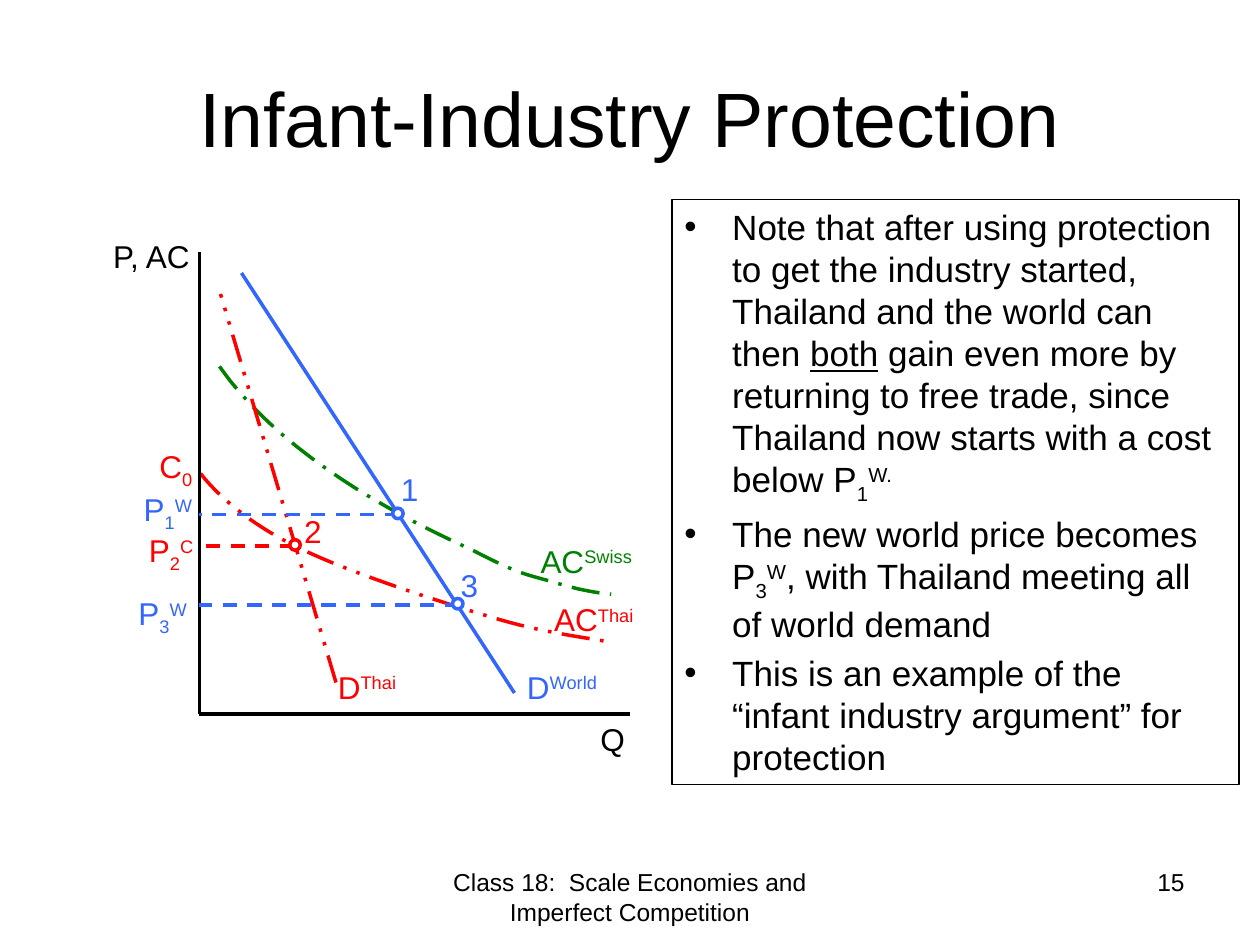
"""Build the infant-industry protection slide on a grid of 120 columns by 90 rows."""
import pptx
import pptx.util
import pptx.dml.color
import pptx.enum.dml
import pptx.enum.shapes
import pptx.enum.text
import lxml.etree

BLACK, RED, BLUE, GREEN = "000000", "FF0000", "3366FF", "008000"
SUB, SUP = -25000, 30000
LEFT, CENTER, RIGHT = (pptx.enum.text.PP_ALIGN.LEFT, pptx.enum.text.PP_ALIGN.CENTER,
                       pptx.enum.text.PP_ALIGN.RIGHT)
DASH = pptx.enum.dml.MSO_LINE.DASH
DASH_DOT = pptx.enum.dml.MSO_LINE.LONG_DASH_DOT
DASH_DOT_DOT = pptx.enum.dml.MSO_LINE.DASH_DOT_DOT
A = "{http://schemas.openxmlformats.org/drawingml/2006/main}"

prs = pptx.Presentation()
prs.slide_width, prs.slide_height = pptx.util.Inches(10), pptx.util.Inches(7.5)
s = prs.slides.add_slide(prs.slide_layouts[6])
cell = prs.slide_width // 120


def stroke(sp, colour, dash=None, width=2):
    sp.line.color.rgb = pptx.dml.color.RGBColor.from_string(colour)
    sp.line.width = pptx.util.Pt(width)
    if dash is not None:
        sp.line.dash_style = dash


def text(box, paras, size, colour=BLACK, align=LEFT):
    sp = s.shapes.add_textbox(*[round(v * cell) for v in box])
    tf = sp.text_frame
    tf.word_wrap = True
    for i, runs in enumerate(paras):
        p = tf.add_paragraph() if i else tf.paragraphs[0]
        p.alignment = align
        for words, base in runs:
            r = p.add_run()
            r.text = words
            r.font.name, r.font.size = "Arial", pptx.util.Pt(size)
            r.font.color.rgb = pptx.dml.color.RGBColor.from_string(colour)
            if base:
                r.font._element.set("baseline", str(base))
    return sp


title = text((6, 3.6, 108, 15), [[("Infant-Industry Protection", 0)]], 44, align=CENTER)
title.text_frame.vertical_anchor = pptx.enum.text.MSO_ANCHOR.MIDDLE

body = text((64, 19, 54, 55.7), [
    [("Note that after using protection to get the industry started, "
      "Thailand and the world can then ", 0), ("both", 0),
     (" gain even more by returning to free trade, since Thailand now "
      "starts with a cost below P", 0), ("1", SUB), ("W.", SUP)],
    [("The new world price becomes P", 0), ("3", SUB), ("W", SUP),
     (", with Thailand meeting all of world demand", 0)],
    [("This is an example of the “infant industry argument” for protection", 0)],
], 20)
stroke(body, BLACK, width=0.75)
body.text_frame.paragraphs[0].runs[1].font.underline = True
for p in body.text_frame.paragraphs:
    p.space_before = pptx.util.Pt(4)
    pPr = p._p.get_or_add_pPr()
    pPr.set("marL", str(pptx.util.Inches(0.38)))
    pPr.set("indent", str(-pptx.util.Inches(0.38)))
    lxml.etree.SubElement(pPr, A + "buFont").set("typeface", "Arial")
    lxml.etree.SubElement(pPr, A + "buChar").set("char", "•")

curves = [
    (GREEN, DASH_DOT, [(20.9, 34.9), (27.6, 44.5), (40.9, 50.5), (45, 52.4), (49.1, 54.5),
                       (49.6, 54.6), (52.6, 55.4), (55.6, 56.4), (58.2, 56.6), (58.2, 56.6)]),
    (RED, DASH_DOT_DOT, [(19.1, 45.1), (20.4, 46.8), (23.4, 49.7), (28.1, 52), (32.8, 54.4),
                         (42.1, 57.4), (47.2, 58.9), (52.2, 60.4), (56.5, 60.8), (58.3, 61.2)]),
]
steps = 20
for colour, dash, pts in curves:
    fb = s.shapes.build_freeform(*[v * cell for v in pts[0]])
    for k in range(0, len(pts) - 1, 3):
        bezier = []
        for t in [n / steps for n in range(1, steps + 1)]:
            weights = ((1 - t) ** 3, 3 * t * (1 - t) ** 2, 3 * t ** 2 * (1 - t), t ** 3)
            bezier.append([cell * sum(w * pt[axis] for w, pt in zip(weights, pts[k:k + 4]))
                           for axis in (0, 1)])
        fb.add_line_segments(bezier, close=False)
    sp = fb.convert_to_shape()
    sp.shadow.inherit = False
    sp.fill.background()
    stroke(sp, colour, dash)

axis_x, axis_y = 19, 68
for x1, y1, x2, y2, colour, dash in [
    (axis_x, axis_y, 60, axis_y, BLACK, None),
    (axis_x, axis_y, axis_x, 24, BLACK, None),
    (32, 65, 21, 28, RED, DASH_DOT_DOT),
    (28, 52, axis_x, 52, RED, DASH),
    (49, 66, 23, 26, BLUE, None),
    (38, 49, axis_x, 49, BLUE, DASH),
    (43.7, 57.6, axis_x, 57.6, BLUE, DASH),
]:
    sp = s.shapes.add_connector(pptx.enum.shapes.MSO_CONNECTOR.STRAIGHT,
                                *[round(v * cell) for v in (x1, y1, x2, y2)])
    stroke(sp, colour, dash)
    lxml.etree.SubElement(sp._element.spPr, A + "effectLst")

for x, y, colour in [(27.6, 51.4, RED), (37.4, 48.4, BLUE), (43.1, 57, BLUE)]:
    sp = s.shapes.add_shape(pptx.enum.shapes.MSO_SHAPE.OVAL,
                            round(x * cell), round(y * cell), cell, cell)
    sp.shadow.inherit = False
    sp.fill.solid()
    sp.fill.fore_color.rgb = pptx.dml.color.RGBColor.from_string("FFFFFF")
    stroke(sp, colour)

for x, y, w, colour, runs in [
    (9.6, 22, 13.4, BLACK, [("P, AC", 0)]),
    (56, 68, 7, BLACK, [("Q", 0)]),
    (50.3, 51, 12.2, GREEN, [("AC", 0), ("Swiss", SUP)]),
    (51.6, 56.6, 10.4, RED, [("AC", 0), ("Thai", SUP)]),
    (31, 63, 9.4, RED, [("D", 0), ("Thai", SUP)]),
    (49, 63, 19, BLUE, [("D", 0), ("World", SUP)]),
    (14, 42, 7, RED, [("C", 0), ("0", SUB)]),
    (12.5, 46.1, 8, BLUE, [("P", 0), ("1", SUB), ("W", SUP)]),
    (13, 50, 7, RED, [("P", 0), ("2", SUB), ("C", SUP)]),
    (12, 56, 8, BLUE, [("P", 0), ("3", SUB), ("W", SUP)]),
    (37, 44.2, 4.6, BLUE, [("1", 0)]),
    (27.8, 48.2, 4.6, RED, [("2", 0)]),
    (42.7, 53.3, 4.6, BLUE, [("3", 0)]),
]:
    text((x, y, w, 4.8), [runs], 18, colour)

text((41, 82, 38, 6.2), [[("Class 18:  Scale Economies and Imperfect Competition", 0)]],
     14, align=CENTER)
text((86, 82, 28, 6.2), [[("15", 0)]], 14, align=RIGHT)

prs.save("out.pptx")
